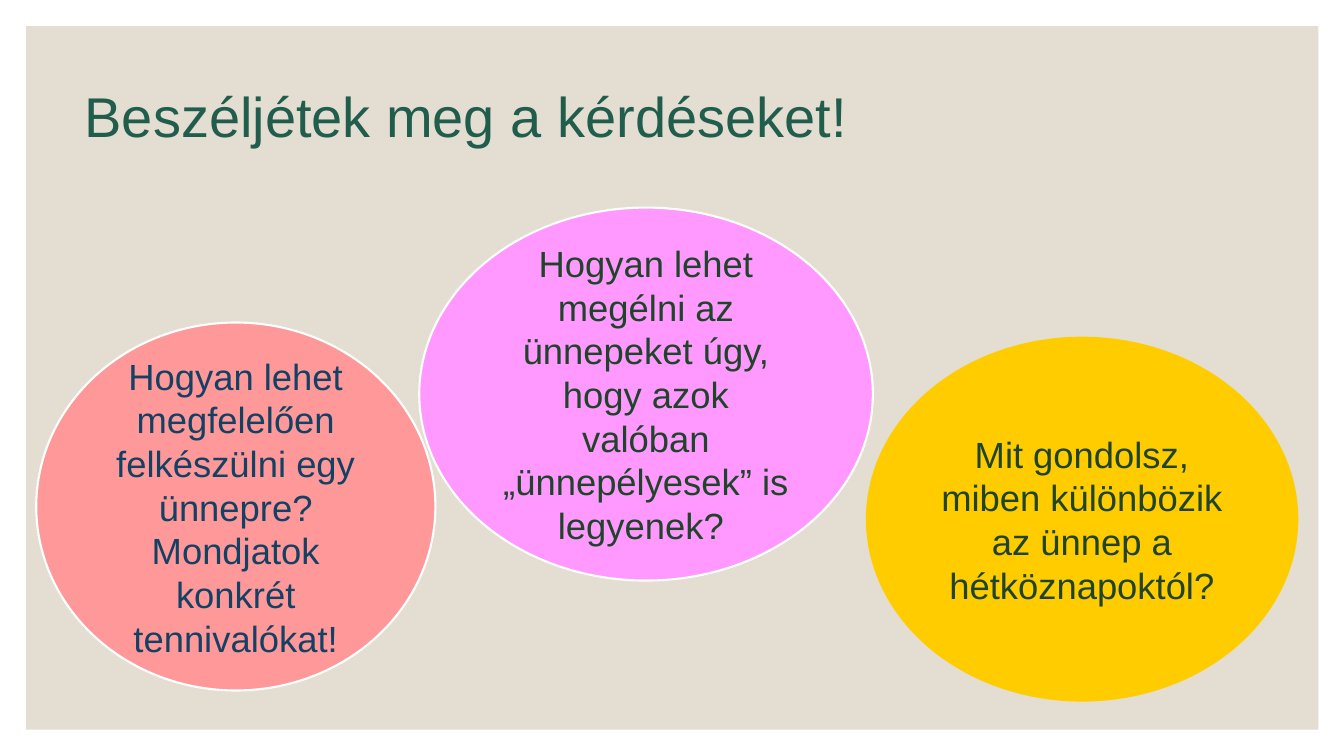
from pptx import Presentation
from pptx.dml.color import RGBColor
from pptx.enum.shapes import MSO_SHAPE
from pptx.enum.text import MSO_ANCHOR, MSO_AUTO_SIZE, PP_ALIGN
from pptx.util import Pt

RECT, OVAL = MSO_SHAPE.RECTANGLE, MSO_SHAPE.OVAL
MIDDLE, NO_FIT = MSO_ANCHOR.MIDDLE, MSO_AUTO_SIZE.NONE
LEFT, CENTER = PP_ALIGN.LEFT, PP_ALIGN.CENTER

# Content
COLORS = {
    "panel": "E3DED1", "title": "215D4C", "white": "FFFFFF",
    "coral": "FF9999", "gold": "FFCC00", "pink": "FF99FF",
    "navy": "134163", "green": "1F442A",
}
SLIDE = (960, 540)
PANEL = (18.72, 18.72, 923.04, 502.56)
TITLE = "Beszéljétek meg a kérdéseket!"
TITLE_BOX = (53.28, 33.12, 847.44, 104.4)

# Box, fill, outline, text colour, paragraphs
BUBBLES = [
    ((25.92, 230.4, 285.12, 262.8), "coral", "white", "navy",
     ["Hogyan lehet megfelelően felkészülni egy ünnepre?",
      "Mondjatok konkrét tennivalókat!"]),
    ((618.48, 240.48, 308.88, 260.64), "gold", None, "green",
     ["Mit gondolsz, miben különbözik az ünnep a hétköznapoktól?"]),
    ((299.52, 148.32, 324, 266.4), "pink", "white", "green",
     ["Hogyan lehet megélni az ünnepeket úgy, hogy azok valóban "
      "„ünnepélyesek” is legyenek? "]),
]

# Format values
FRAME = {"word_wrap": True, "auto_size": NO_FIT, "vertical_anchor": MIDDLE}
HEAD = {"alignment": LEFT, "line_spacing": 0.9}
BODY = {"alignment": CENTER}


def rgb(name):
    return RGBColor.from_string(COLORS[name])


def apply(target, values):
    for name, value in values.items():
        setattr(target, name, value)


def write(shape, lines, size, color, layout):
    frame = shape.text_frame
    frame.text = "\n".join(lines)
    apply(frame, FRAME)
    for para in frame.paragraphs:
        apply(para, layout)
        for run in para.runs:
            apply(run.font, {"name": "Arial", "size": Pt(size)})
            run.font.color.rgb = rgb(color)


def draw(slide, kind, box, fill, edge=None):
    shape = slide.shapes.add_shape(kind, *map(Pt, box))
    shape.shadow.inherit = False
    shape.fill.solid()
    shape.fill.fore_color.rgb = rgb(fill)
    if edge:
        shape.line.color.rgb = rgb(edge)
        shape.line.width = Pt(1.5)
    else:
        shape.line.fill.background()
    return shape


def main():
    deck = Presentation()
    deck.slide_width, deck.slide_height = map(Pt, SLIDE)
    slide = deck.slides.add_slide(deck.slide_layouts[5])

    # Title
    title = slide.shapes.title
    apply(title, dict(zip(("left", "top", "width", "height"),
                          map(Pt, TITLE_BOX))))
    write(title, [TITLE], 40, "title", HEAD)

    # Panel behind the title
    panel = draw(slide, RECT, PANEL, "panel")
    title.element.addprevious(panel.element)

    # Question bubbles
    for box, fill, edge, color, lines in BUBBLES:
        bubble = draw(slide, OVAL, box, fill, edge)
        write(bubble, lines, 26, color, BODY)

    deck.save("out.pptx")


if __name__ == "__main__":
    main()
